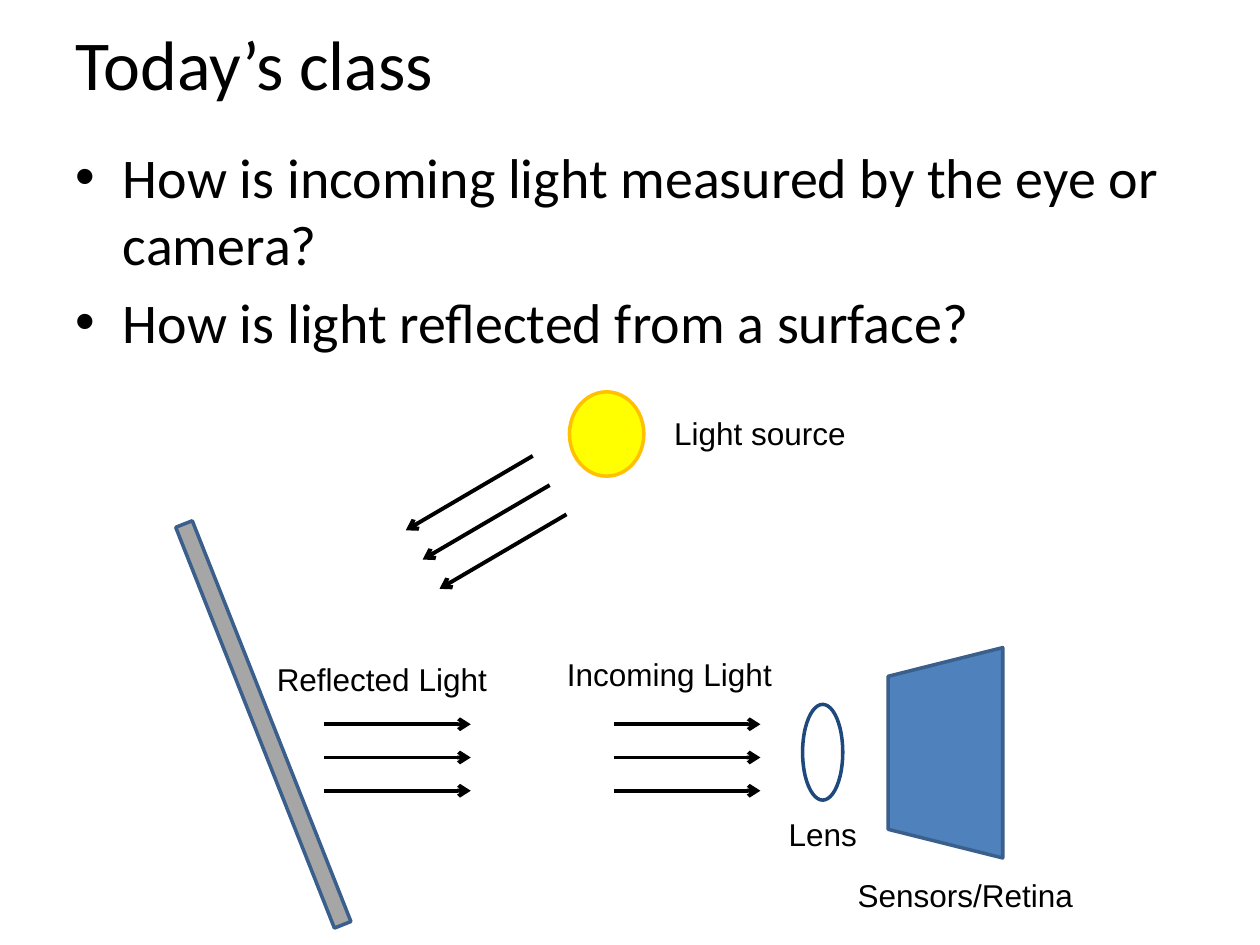
import pptx
import pptx.util
import pptx.dml.color
import pptx.enum.shapes
import pptx.enum.text
from lxml import etree
from pptx.oxml.ns import qn

Cm, Pt = pptx.util.Cm, pptx.util.Pt
RGBColor = pptx.dml.color.RGBColor
SHAPE = pptx.enum.shapes.MSO_SHAPE

BLACK = RGBColor(0x00, 0x00, 0x00)
BLUE = RGBColor(0x4F, 0x81, 0xBD)
EDGE_BLUE = RGBColor(0x3A, 0x5F, 0x8C)
NAVY = RGBColor(0x1F, 0x49, 0x7D)
GRAY = RGBColor(0xA6, 0xA6, 0xA6)
YELLOW = RGBColor(0xFF, 0xFF, 0x00)
ORANGE = RGBColor(0xFF, 0xC0, 0x00)

TITLE = "Today’s class"
QUESTIONS = [
    "How is incoming light measured by the eye or camera?",
    "How is light reflected from a surface?",
]

# Lengths in centimetres: preset, (left, top, width, height), rotation, fill, line
SCENE = [
    (SHAPE.TRAPEZOID, (16.94, 14.02, 4.24, 2.31), 270, BLUE, EDGE_BLUE),  # sensors
    (SHAPE.OVAL, (16.18, 14.2, 0.81, 1.93), 0, None, NAVY),  # lens
    (SHAPE.RECTANGLE, (5.13, 10.26, 0.36, 8.69), 338.4, GRAY, EDGE_BLUE),  # surface
    (SHAPE.OVAL, (11.48, 7.9, 1.5, 1.7), 0, YELLOW, ORANGE),  # light source
]

# First ray's start, ray vector, step to the next ray
RAYS_PER_BEAM = 3
BEAMS = [
    ((12.37, 14.6), (2.96, 0), (0, 0.67)),  # incoming
    ((6.53, 14.6), (2.96, 0), (0, 0.67)),  # reflected
    ((10.74, 9.19), (-2.56, 1.5), (0.34, 0.59)),  # from the source
]

# Text, left, top, width
LABEL_HEIGHT = 1.02
LABELS = [
    ("Light source", 13.34, 8.23, 4.01),
    ("Sensors/Retina", 17.04, 17.53, 4.9),
    ("Lens", 15.65, 16.31, 1.91),
    ("Reflected Light", 5.33, 13.18, 4.78),
    ("Incoming Light", 11.18, 13.08, 4.67),
]


def style_font(paragraph, name, size):
    paragraph.font.name = name
    paragraph.font.size = Pt(size)
    paragraph.font.color.rgb = BLACK


def fill_placeholder(placeholder, box, lines, size):
    placeholder.left, placeholder.top, placeholder.width, placeholder.height = map(Cm, box)
    placeholder.text_frame.text = "\n".join(lines)
    for paragraph in placeholder.text_frame.paragraphs:
        paragraph.alignment = pptx.enum.text.PP_ALIGN.LEFT
        style_font(paragraph, "Calibri", size)


def add_part(slide, preset, box, rotation, fill, line):
    part = slide.shapes.add_shape(preset, *map(Cm, box))
    part.rotation = rotation
    part.shadow.inherit = False
    if fill is None:
        part.fill.background()
    else:
        part.fill.solid()
        part.fill.fore_color.rgb = fill
    part.line.color.rgb = line
    part.line.width = Pt(2)


def add_ray(slide, x, y, dx, dy):
    ray = slide.shapes.add_connector(
        pptx.enum.shapes.MSO_CONNECTOR.STRAIGHT, Cm(x), Cm(y), Cm(x + dx), Cm(y + dy))
    ray.line.color.rgb = BLACK
    ray.line.width = Pt(2.25)
    etree.SubElement(ray.line._get_or_add_ln(), qn("a:tailEnd"), type="arrow")
    etree.SubElement(ray._element.spPr, qn("a:effectLst"))


def add_label(slide, text, left, top, width):
    label = slide.shapes.add_textbox(Cm(left), Cm(top), Cm(width), Cm(LABEL_HEIGHT))
    frame = label.text_frame
    frame.word_wrap = False
    frame.auto_size = pptx.enum.text.MSO_AUTO_SIZE.SHAPE_TO_FIT_TEXT
    frame.text = text
    style_font(frame.paragraphs[0], "Arial", 18)


def main():
    deck = pptx.Presentation()
    deck.slide_width, deck.slide_height = Cm(25.4), Cm(19.05)
    slide = deck.slides.add_slide(deck.slide_layouts[1])

    fill_placeholder(slide.shapes.title, (1.27, 0, 22.86, 2.54), [TITLE], 40)
    fill_placeholder(slide.placeholders[1], (1.27, 2.74, 22.86, 14.27), QUESTIONS, 32)

    for part in SCENE:
        add_part(slide, *part)
    for (x, y), (dx, dy), (step_x, step_y) in BEAMS:
        for i in range(RAYS_PER_BEAM):
            add_ray(slide, x + i * step_x, y + i * step_y, dx, dy)
    for label in LABELS:
        add_label(slide, *label)

    deck.save("out.pptx")


if __name__ == "__main__":
    main()
